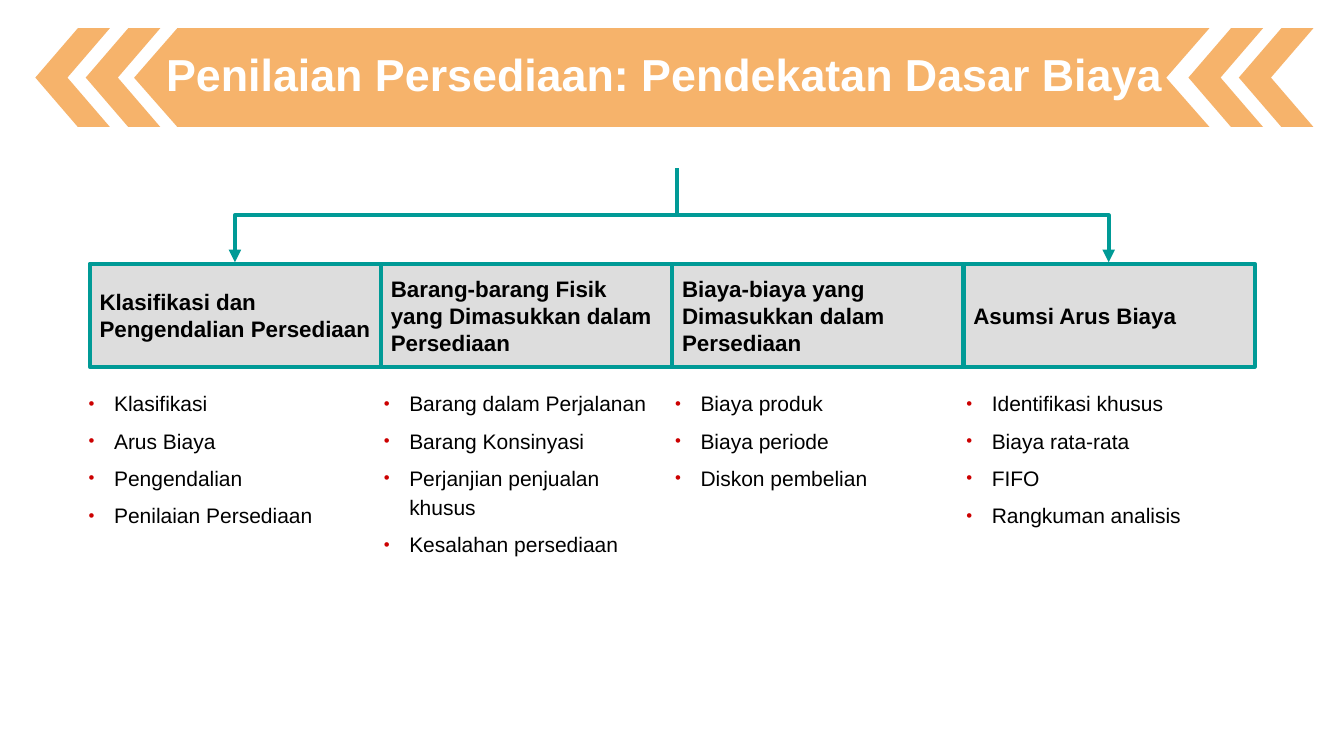
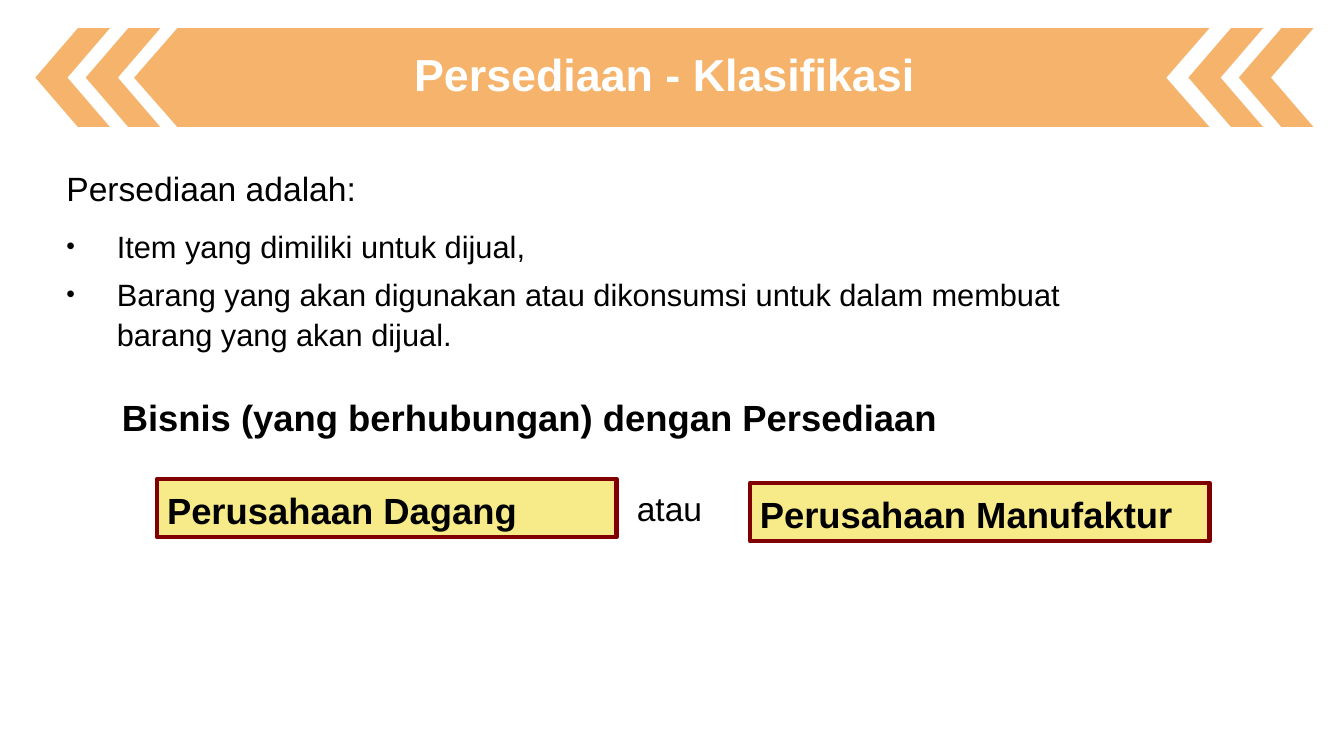
"""Build two slides on inventory valuation and classification."""
from lxml import etree
from pptx import Presentation
from pptx.dml.color import RGBColor
from pptx.enum.shapes import MSO_CONNECTOR, MSO_SHAPE
from pptx.enum.text import MSO_ANCHOR, MSO_AUTO_SIZE, PP_ALIGN
from pptx.oxml.ns import qn
from pptx.util import Cm, Pt

ELBOW = MSO_CONNECTOR.ELBOW
CHEVRON, RECTANGLE = MSO_SHAPE.CHEVRON, MSO_SHAPE.RECTANGLE
TOP, MIDDLE = MSO_ANCHOR.TOP, MSO_ANCHOR.MIDDLE
LEFT, CENTER = PP_ALIGN.LEFT, PP_ALIGN.CENTER
NO_AUTOFIT = MSO_AUTO_SIZE.NONE

FONT = "Arial"
ORANGE, TEAL, GREY = "F3932D", "009A96", "DDDDDD"
YELLOW, MAROON, RED = "F7EA89", "800000", "CC0000"
BLACK, WHITE = "000000", "FFFFFF"


def rgb(value):
    return RGBColor.from_string(value)


def write(shape, lines, size, color=BLACK, bold=False, align=LEFT, anchor=TOP,
          spacing=1.0, before=0, indent=0, hanging=0, bullet_color=None):
    frame = shape.text_frame
    frame.text = "\n".join(lines)
    frame.word_wrap = True
    frame.auto_size = NO_AUTOFIT
    frame.vertical_anchor = anchor
    for paragraph in frame.paragraphs:
        paragraph.alignment = align
        paragraph.line_spacing = spacing
        paragraph.space_before = Pt(before)
        paragraph.space_after = Pt(0)
        properties = paragraph._p.get_or_add_pPr()
        properties.set("marL", str(Cm(indent)))
        properties.set("indent", str(-Cm(hanging)))
        if bullet_color:
            tint = etree.SubElement(properties, qn("a:buClr"))
            etree.SubElement(tint, qn("a:srgbClr"), val=bullet_color)
            etree.SubElement(properties, qn("a:buSzPct"), val="80000")
            etree.SubElement(properties, qn("a:buFont"), typeface=FONT)
            etree.SubElement(properties, qn("a:buChar"), char="•")
        else:
            etree.SubElement(properties, qn("a:buNone"))
        paragraph.font.name = FONT
        paragraph.font.size = Pt(size)
        paragraph.font.bold = bold
        paragraph.font.color.rgb = rgb(color)
    return frame


prs = Presentation()
prs.slide_width, prs.slide_height = Cm(33.87), Cm(19.05)
valuation = prs.slides.add_slide(prs.slide_layouts.get_by_name("Comparison"))
classification = prs.slides.add_slide(prs.slide_layouts.get_by_name("Title and Content"))

# The banner is drawn once and kept on the slide master.
banner = []
for left in (0.89, 2.16, 29.95, 31.22):
    chevron = valuation.shapes.add_shape(CHEVRON, Cm(left), Cm(0.71), Cm(1.88), Cm(2.49))
    chevron.adjustments[0] = 0.57
    chevron.rotation = 180
    banner.append(chevron)
outline = valuation.shapes.build_freeform(Cm(4.47), Cm(0.71))
outline.add_line_segments([(Cm(x), Cm(y)) for x, y in (
    (30.48, 0.71), (29.39, 1.96), (30.48, 3.2), (4.47, 3.2), (3.38, 1.96))])
banner.append(outline.convert_to_shape())
for number, part in enumerate(banner, 101):
    part.shadow.inherit = False
    part.fill.solid()
    part.fill.fore_color.rgb = rgb(ORANGE)
    part.line.fill.background()
    tint = part._element.spPr.find(qn("a:solidFill")).find(qn("a:srgbClr"))
    etree.SubElement(tint, qn("a:alpha"), val="70000")
    part._element.nvSpPr.cNvPr.set("id", str(number))
    prs.slide_master.shapes._spTree.append(part._element)

for slide, heading in ((valuation, "Penilaian Persediaan: Pendekatan Dasar Biaya"),
                       (classification, "Persediaan - Klasifikasi")):
    title = slide.shapes.title
    title.left, title.top, title.width, title.height = Cm(3.58), Cm(0.94), Cm(26.04), Cm(2.01)
    write(title, [heading], 32, WHITE, True, CENTER, MIDDLE, spacing=0.9, indent=0.3)

topics = (
    ("Klasifikasi dan Pengendalian Persediaan", 1.98,
     ["Klasifikasi", "Arus Biaya", "Pengendalian", "Penilaian Persediaan"]),
    ("Barang-barang Fisik yang Dimasukkan dalam Persediaan", 9.42,
     ["Barang dalam Perjalanan", "Barang Konsinyasi", "Perjanjian penjualan khusus",
      "Kesalahan persediaan"]),
    ("Biaya-biaya yang Dimasukkan dalam Persediaan", 16.76,
     ["Biaya produk", "Biaya periode", "Diskon pembelian"]),
    ("Asumsi Arus Biaya", 24.1,
     ["Identifikasi khusus", "Biaya rata-rata", "FIFO", "Rangkuman analisis"]),
)
topic_width = 7.34
lists = [p for p in valuation.placeholders if p.placeholder_format.idx in (1, 2, 3, 4)]
for column, ((topic, list_left, items), items_list) in enumerate(zip(topics, lists)):
    box = valuation.shapes.add_shape(RECTANGLE, Cm(2.26 + column * topic_width), Cm(6.65),
                                     Cm(topic_width), Cm(2.59))
    box.shadow.inherit = False
    box.fill.solid()
    box.fill.fore_color.rgb = rgb(GREY)
    box.line.color.rgb = rgb(TEAL)
    box.line.width = Pt(3)
    write(box, [topic], 16, bold=True, anchor=MIDDLE)

    items_list.left, items_list.top = Cm(list_left), Cm(9.45)
    items_list.width, items_list.height = Cm(7.62), Cm(5.16)
    frame = write(items_list, items, 15, spacing=1.15, before=6, indent=0.64, hanging=0.64,
                  bullet_color=RED)
    frame.margin_top = Cm(0.3)
    frame.paragraphs[0].space_before = Pt(1)

stem_x, stem_top, drop = 17.07, 4.24, 2.37
for target_x, turn in ((27.94, {"rot": "16200000", "flipH": "1"}), (5.92, {"rot": "5400000"})):
    span = abs(target_x - stem_x)
    left = (stem_x + target_x - drop) / 2
    top = stem_top + (drop - span) / 2
    branch = valuation.shapes.add_connector(ELBOW, Cm(left), Cm(top),
                                            Cm(left + drop), Cm(top + span))
    for key, value in turn.items():
        branch._element.spPr.find(qn("a:xfrm")).set(key, value)
    branch.line.color.rgb = rgb(TEAL)
    branch.line.width = Pt(3)
    etree.SubElement(branch.line._get_or_add_ln(), qn("a:tailEnd"), type="triangle")
    etree.SubElement(branch._element.spPr, qn("a:effectLst"))

definition = classification.placeholders[1]
definition.left, definition.top = Cm(1.42), Cm(4.01)
definition.width, definition.height = Cm(27.05), Cm(5.08)
frame = write(definition, [
    "Persediaan adalah:",
    "Item yang dimiliki untuk dijual,",
    "Barang yang akan digunakan atau dikonsumsi untuk dalam membuat barang yang akan dijual.",
], 22, spacing=1.1, before=5, indent=1.27, hanging=1.27, bullet_color=BLACK)
intro = frame.paragraphs[0]
intro.font.size = Pt(24)
intro.space_before, intro.space_after = Pt(2), Pt(6)
intro_properties = intro._p.pPr
for tag in ("a:buClr", "a:buSzPct", "a:buFont"):
    intro_properties.remove(intro_properties.find(qn(tag)))
intro_properties.replace(intro_properties.find(qn("a:buChar")), etree.Element(qn("a:buNone")))

for company, left, top in (("Perusahaan Dagang", 3.96, 12.07),
                           ("Perusahaan Manufaktur", 18.9, 12.17)):
    box = classification.shapes.add_shape(RECTANGLE, Cm(left), Cm(top), Cm(11.58), Cm(1.47))
    box.shadow.inherit = False
    box.fill.solid()
    box.fill.fore_color.rgb = rgb(YELLOW)
    box.line.color.rgb = rgb(MAROON)
    box.line.width = Pt(3)
    write(box, [company], 26, bold=True, spacing=1.1, before=2)

for words, left, top, width, size, bold in (
        ("Bisnis (yang berhubungan) dengan Persediaan", 2.82, 9.83, 29.06, 26, True),
        ("atau", 15.8, 12.17, 3.1, 24, False)):
    label = classification.shapes.add_textbox(Cm(left), Cm(top), Cm(width), Cm(1.35))
    write(label, [words], size, bold=bold, before=2)

prs.save("out.pptx")
